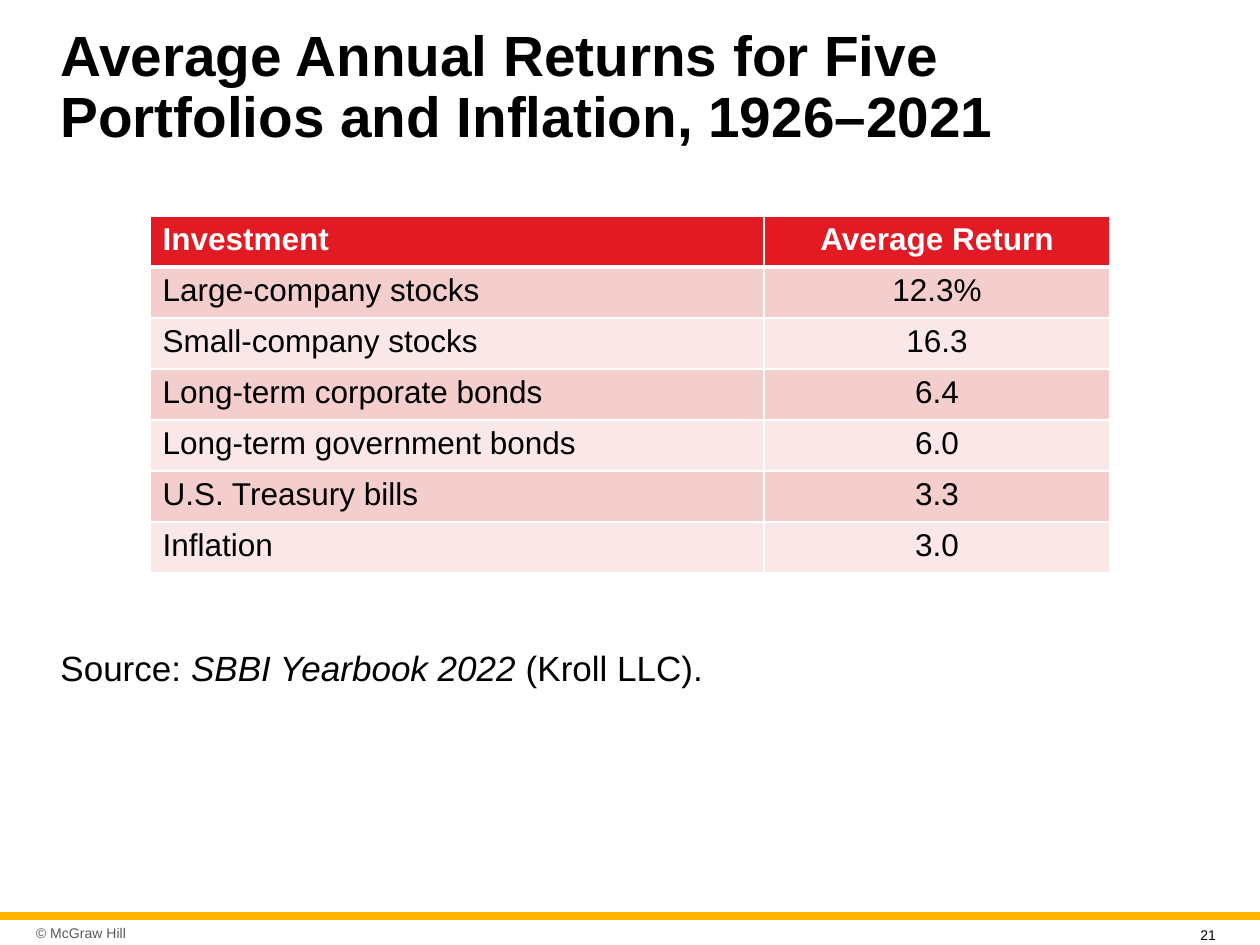
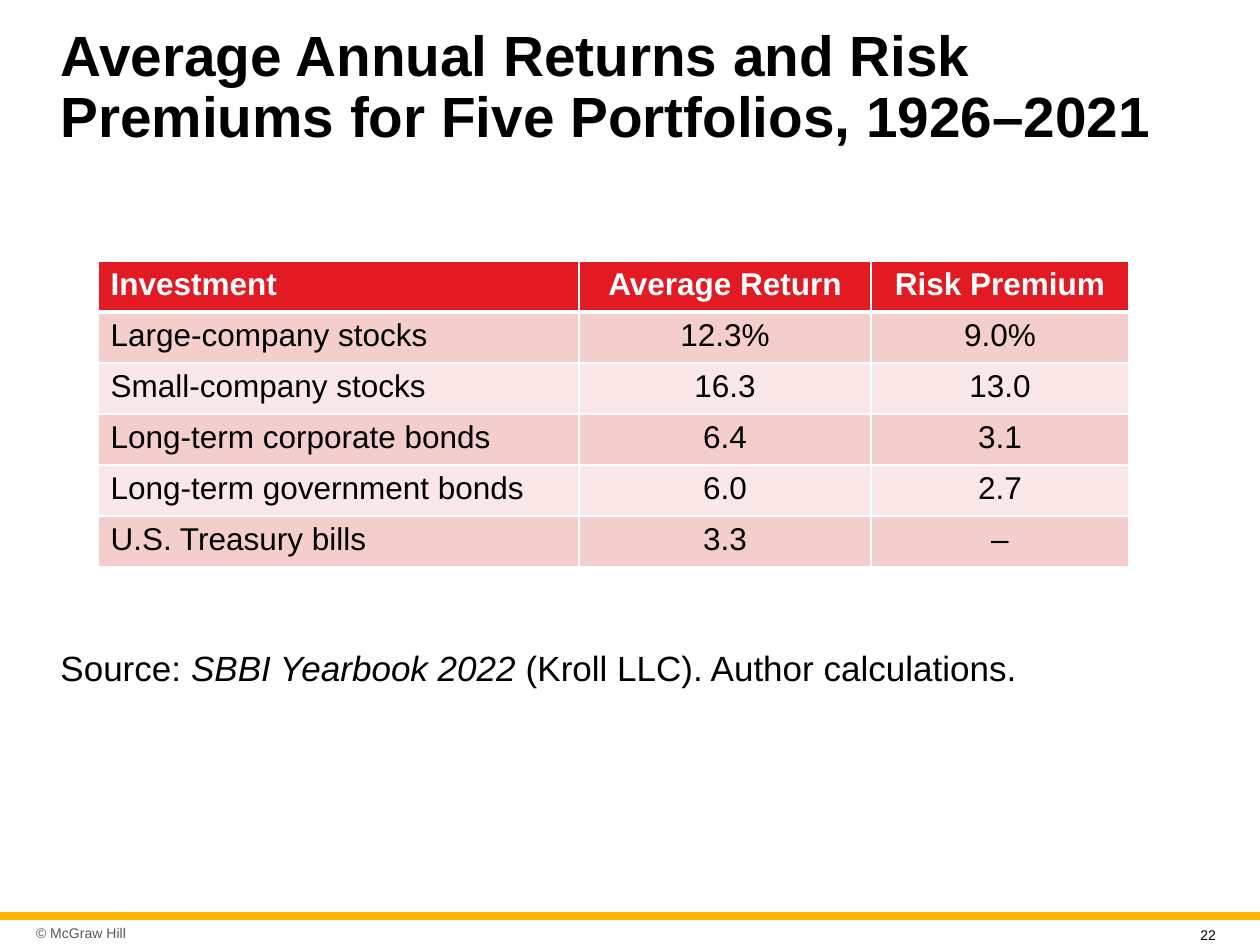
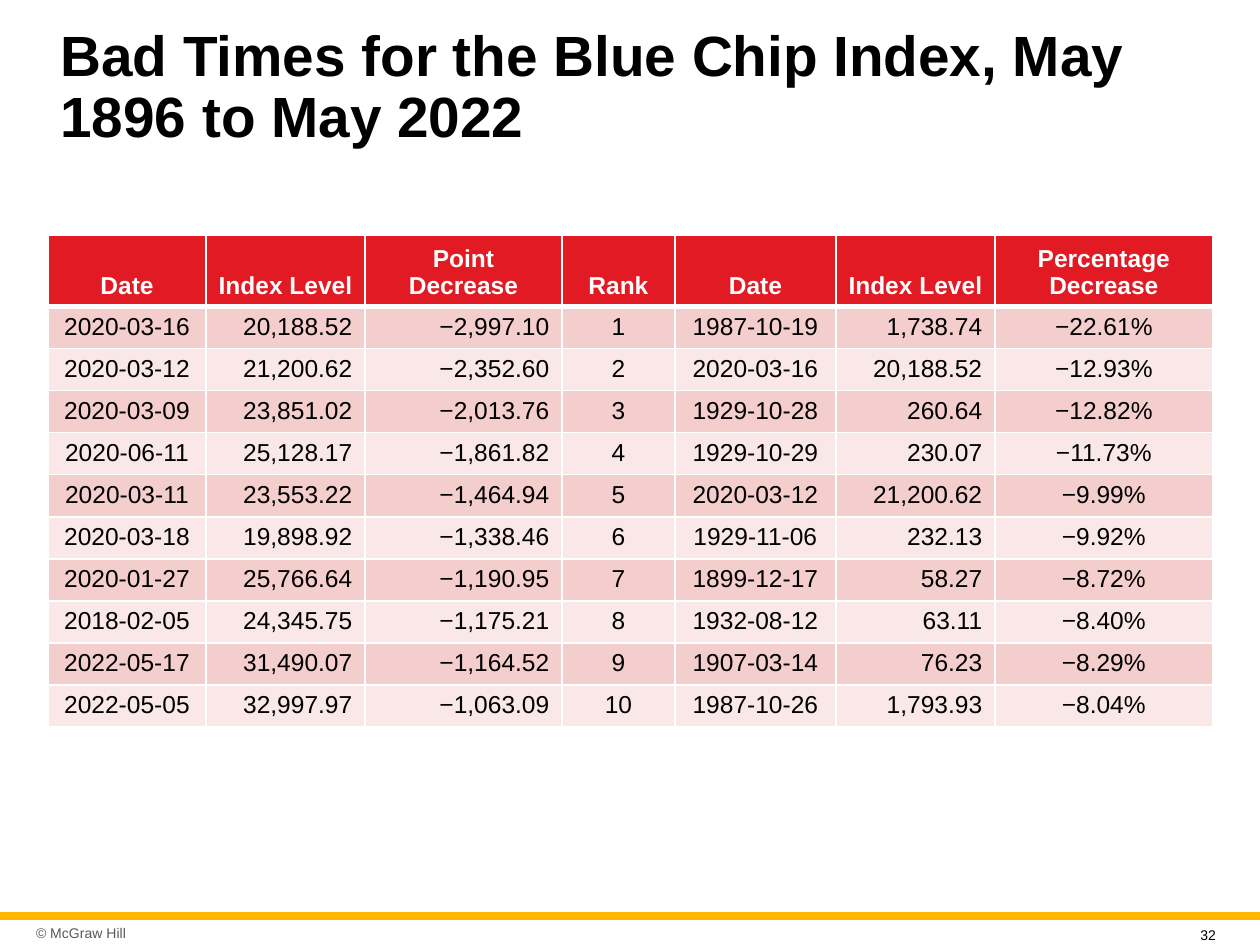
"""Build three slides of investment return tables."""
from lxml import etree
from pptx import Presentation, util as u
from pptx.dml.color import RGBColor
from pptx.enum import shapes, text
from pptx.oxml.ns import qn

PX = 914400 / 126
FONT = "Arial"
BLACK = RGBColor(0x00, 0x00, 0x00)
WHITE = RGBColor(0xFF, 0xFF, 0xFF)
GREY = RGBColor(0x59, 0x59, 0x59)
GOLD = RGBColor(0xFF, 0xB6, 0x00)
RED = RGBColor(0xE2, 0x1A, 0x23)
PINK = RGBColor(0xF4, 0xCD, 0xCD)
PALE = RGBColor(0xFA, 0xE8, 0xE8)
ALIGN = {"l": text.PP_ALIGN.LEFT, "c": text.PP_ALIGN.CENTER, "r": text.PP_ALIGN.RIGHT}
TOP, MIDDLE, BOTTOM = (text.MSO_ANCHOR.TOP, text.MSO_ANCHOR.MIDDLE,
                       text.MSO_ANCHOR.BOTTOM)

RETURNS = [
    ("Investment", "Average Return"),
    ("Large-company stocks", "12.3%"),
    ("Small-company stocks", "16.3"),
    ("Long-term corporate bonds", "6.4"),
    ("Long-term government bonds", "6.0"),
    ("U.S. Treasury bills", "3.3"),
    ("Inflation", "3.0"),
]
PREMIUMS = ["Risk Premium", "9.0%", "13.0", "3.1", "2.7", "–"]
RETURNS_AND_PREMIUMS = [(*row, premium) for row, premium in zip(RETURNS, PREMIUMS)]
BAD_TIMES = [
    ("Date", "Index Level", "Point Decrease", "Rank", "Date", "Index Level",
     "Percentage Decrease"),
    ("2020-03-16", "20,188.52", "−2,997.10", "1", "1987-10-19", "1,738.74", "−22.61%"),
    ("2020-03-12", "21,200.62", "−2,352.60", "2", "2020-03-16", "20,188.52", "−12.93%"),
    ("2020-03-09", "23,851.02", "−2,013.76", "3", "1929-10-28", "260.64", "−12.82%"),
    ("2020-06-11", "25,128.17", "−1,861.82", "4", "1929-10-29", "230.07", "−11.73%"),
    ("2020-03-11", "23,553.22", "−1,464.94", "5", "2020-03-12", "21,200.62", "−9.99%"),
    ("2020-03-18", "19,898.92", "−1,338.46", "6", "1929-11-06", "232.13", "−9.92%"),
    ("2020-01-27", "25,766.64", "−1,190.95", "7", "1899-12-17", "58.27", "−8.72%"),
    ("2018-02-05", "24,345.75", "−1,175.21", "8", "1932-08-12", "63.11", "−8.40%"),
    ("2022-05-17", "31,490.07", "−1,164.52", "9", "1907-03-14", "76.23", "−8.29%"),
    ("2022-05-05", "32,997.97", "−1,063.09", "10", "1987-10-26", "1,793.93", "−8.04%"),
]


def px(n):
    """Turn px into EMU."""
    return u.Emu(round(n * PX))


def style(p, size, color=BLACK, bold=False):
    """Set the font of a paragraph."""
    p.font.name, p.font.size, p.font.bold = FONT, u.Pt(size), bold
    p.font.color.rgb = color


def add_text(s, box, runs, size, color=BLACK, bold=False, anchor=TOP, spacing=None):
    """Add a wrapped one-paragraph text box of (text, italic) runs."""
    tf = s.shapes.add_textbox(*map(px, box)).text_frame
    tf.word_wrap, tf.vertical_anchor = True, anchor
    p = tf.paragraphs[0]
    p.line_spacing = spacing
    style(p, size, color, bold)
    for content, italic in runs:
        r = p.add_run()
        r.text = content
        if italic:
            r.font.italic = True
    return tf


def add_borders(cell, bottom):
    """Draw white cell borders, with the bottom width given in points."""
    tcPr = cell._tc.get_or_add_tcPr()
    for i, (tag, width) in enumerate(
            [("a:lnL", 1), ("a:lnR", 1), ("a:lnT", 1), ("a:lnB", bottom)]):
        ln = etree.Element(qn(tag), w=str(u.Pt(width)))
        fill = etree.SubElement(ln, qn("a:solidFill"))
        etree.SubElement(fill, qn("a:srgbClr"), val=str(WHITE))
        tcPr.insert(i, ln)


def add_table(s, x, y, widths, heights, rows, aligns, size, header_anchor=TOP):
    """Add a banded table with a red header; heights are header and body rows."""
    header_h, body_h = heights
    total_h = header_h + body_h * (len(rows) - 1)
    table = s.shapes.add_table(len(rows), len(widths), px(x), px(y),
                               px(sum(widths)), px(total_h)).table
    for col, width in zip(table.columns, widths):
        col.width = px(width)
    for i, row in enumerate(rows):
        header = i == 0
        table.rows[i].height = px(header_h if header else body_h)
        for j, value in enumerate(row):
            cell = table.cell(i, j)
            cell.fill.solid()
            cell.fill.fore_color.rgb = RED if header else (PALE, PINK)[i % 2]
            cell.vertical_anchor = header_anchor if header else TOP
            add_borders(cell, 3 if i == 0 else 1)
            if i == 1:
                cell._tc.tcPr.find(qn("a:lnT")).set("w", str(u.Pt(3)))
            p = cell.text_frame.paragraphs[0]
            p.alignment = ALIGN["c" if header and j else aligns[j]]
            style(p, size, WHITE if header else BLACK, header)
            p.add_run().text = value


def add_slide(prs, title, number):
    """Add a slide with its title, gold band and footer."""
    s = prs.slides.add_slide(prs.slide_layouts[6])
    band = s.shapes.add_shape(shapes.MSO_SHAPE.RECTANGLE, 0, px(912), px(1260), px(8))
    band.shadow.inherit = False
    band.fill.solid()
    band.fill.fore_color.rgb = GOLD
    band.line.fill.background()
    tf = add_text(s, (30, 918, 170, 30), [("© McGraw Hill", False)], 8, GREY,
                  anchor=MIDDLE)
    tf.margin_left = tf.margin_right = px(6)
    add_text(s, (48, 26, 1166, 125), [(title, False)], 32.4, bold=True,
             anchor=MIDDLE, spacing=0.9)
    add_text(s, (1188, 920, 49, 23), [(str(number), False)], 8)
    return s


def add_source(s, ending):
    """Add the source line below a table."""
    add_text(s, (48, 640, 1166, 56),
             [("Source: ", False), ("SBBI Yearbook 2022", True), (ending, False)], 20)


def main():
    """Build and save the presentation."""
    prs = Presentation()
    prs.slide_width, prs.slide_height = px(1260), px(945)

    s = add_slide(prs, "Average Annual Returns for Five Portfolios and Inflation, "
                       "1926–2021", 21)
    add_table(s, 150, 216, [614, 346], (51, 51), RETURNS, "lc", 18)
    add_source(s, " (Kroll LLC).")

    s = add_slide(prs, "Average Annual Returns and Risk Premiums for Five Portfolios, "
                       "1926–2021", 22)
    add_table(s, 98, 261, [481, 292, 258], (51, 51), RETURNS_AND_PREMIUMS, "lcc", 18)
    add_source(s, " (Kroll LLC). Author calculations.")

    s = add_slide(prs, "Bad Times for the Blue Chip Index, May 1896 to May 2022", 32)
    add_table(s, 48, 235, [158, 159, 197, 113, 161, 159, 218], (66, 40), BAD_TIMES,
              "crrccrc", 14, BOTTOM)

    prs.save("out.pptx")


if __name__ == "__main__":
    main()
